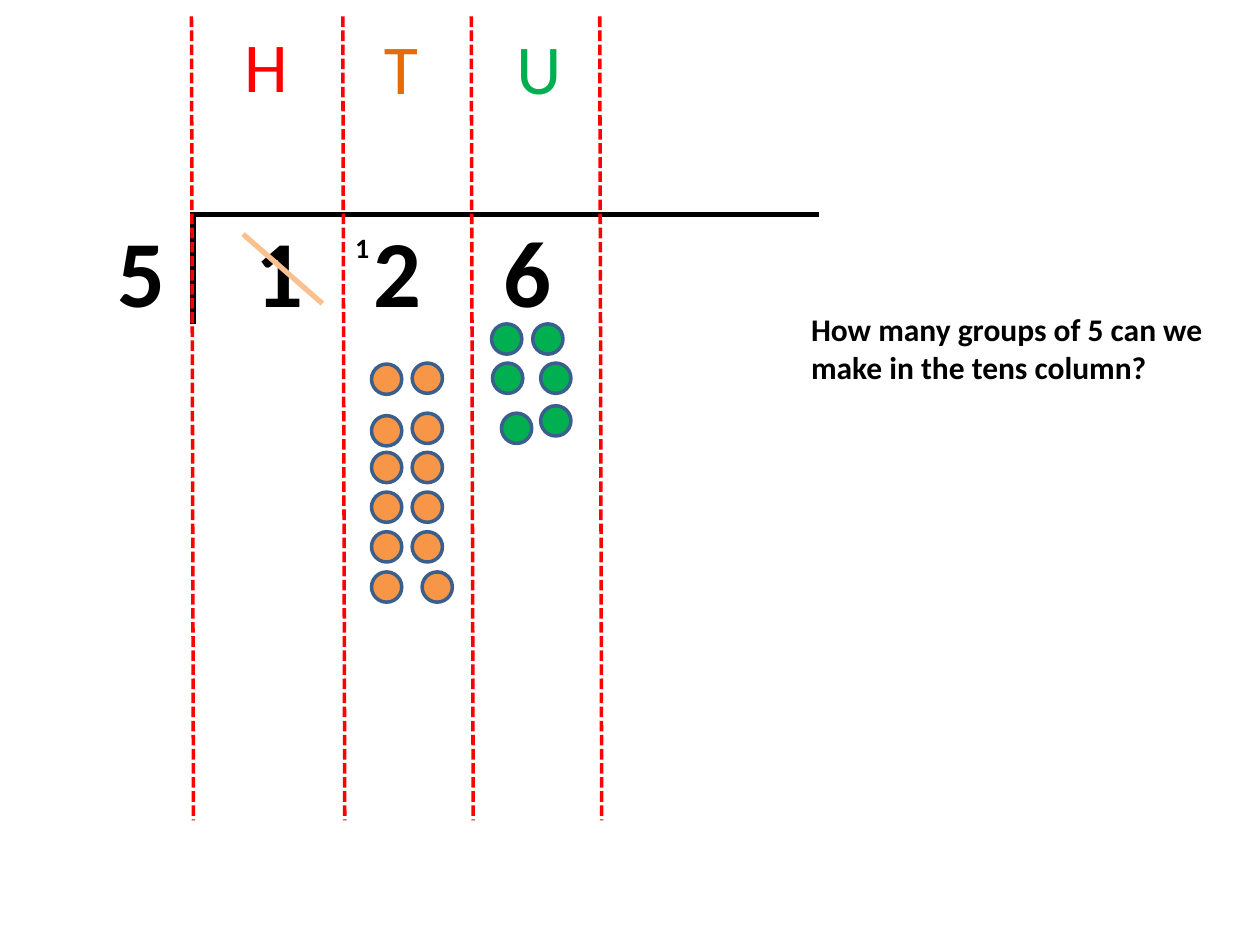
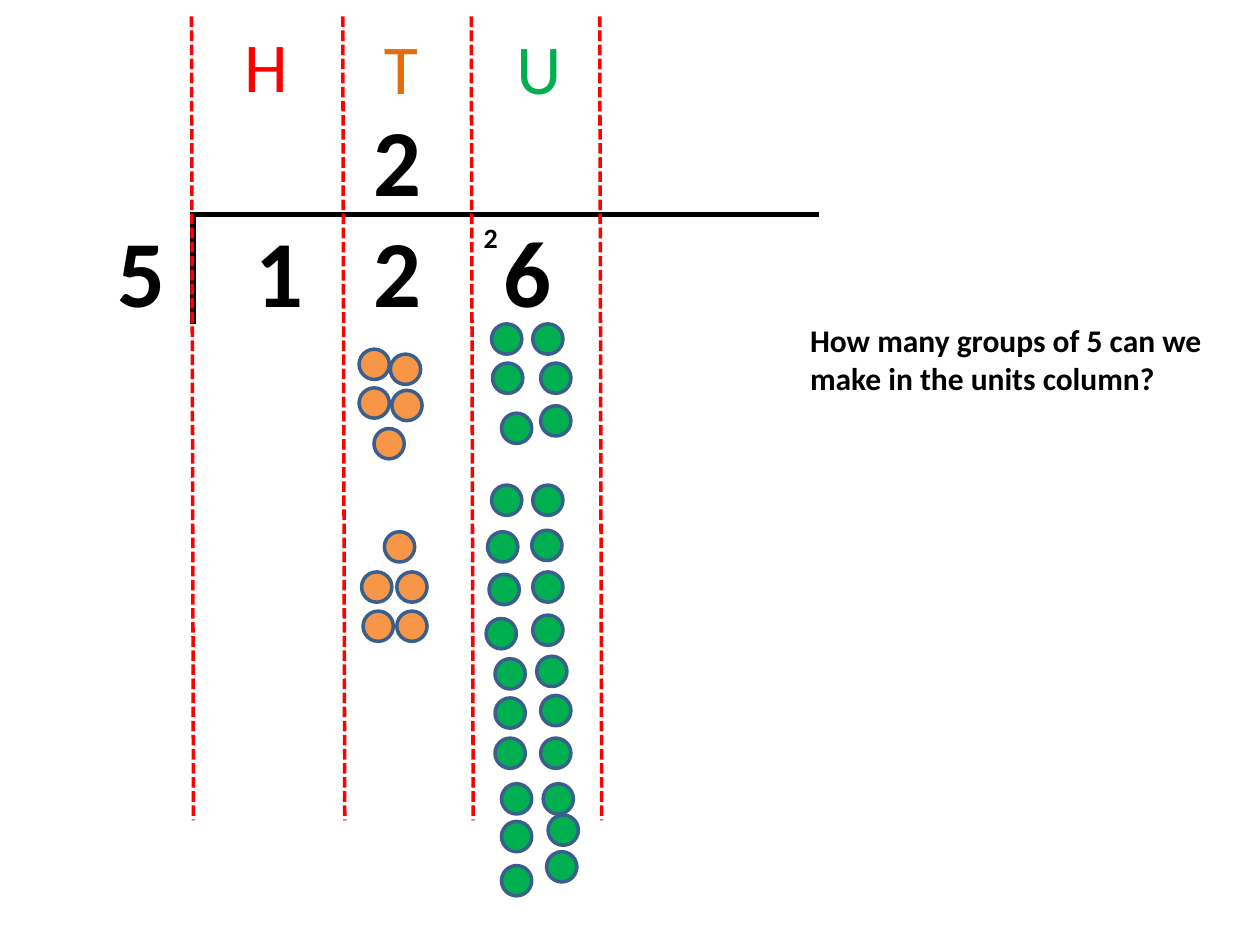
from lxml import etree
from pptx import Presentation
from pptx import util as u
from pptx.dml.color import RGBColor
from pptx.enum import dml, shapes
from pptx.oxml.ns import qn

Cm = u.Cm
FONT = "Calibri"
BLACK, RED = "000000", "FF0000"
ORANGE, GREEN = "E46C0A", "00B050"
PEACH, SAND, BLUE = "F79646", "FAC090", "3A5F8C"

DIGIT_TOP = 4.17
TEN_X = 7.29
SIX = [(9.91, 6.53), (10.74, 6.53), (9.93, 7.32),
       (10.9, 7.32), (10.9, 8.18), (10.11, 8.33)]
TWELVE = [(7.49, 7.34), (8.31, 7.32), (7.49, 8.38), (8.31, 8.33),
          *[(x, 9.12 + 0.8 * row) for row in range(3) for x in (7.49, 8.31)],
          (7.49, 11.53), (8.51, 11.53)]
FIVES = [(7.24, 7.04), (7.87, 7.14), (7.24, 7.82), (7.9, 7.87), (7.54, 8.64),
         (7.75, 10.72), (7.29, 11.53), (8, 11.53), (7.32, 12.32), (8, 12.32)]
TWENTY = [(9.91, 9.78), (10.74, 9.78), (9.83, 10.72), (10.72, 10.69),
          (9.86, 11.58), (10.74, 11.53), (9.8, 12.47), (10.74, 12.4),
          (9.98, 13.28), (10.82, 13.23), (9.98, 14.07), (10.9, 14.02),
          (9.98, 14.88), (10.9, 14.88), (10.11, 15.8), (10.95, 15.8),
          (10.11, 16.56), (11.05, 16.43), (10.11, 17.45), (11.02, 17.17)]


def color(code):
    return RGBColor.from_string(code)


def label(slide, words, x, y, size, tint=BLACK, bold=True, wide=1.19, high=2.57):
    box = slide.shapes.add_textbox(Cm(x), Cm(y), Cm(wide), Cm(high))
    frame = box.text_frame
    frame.word_wrap = True
    frame.text = words
    font = frame.paragraphs[0].runs[0].font
    font.name, font.size, font.bold = FONT, u.Pt(size), bold
    font.color.rgb = color(tint)


def digit(slide, words, x, y=DIGIT_TOP):
    label(slide, words, x, y, 54)


def carry(slide, words, x, y):
    """Write the small digit carried into the next column."""
    label(slide, words, x, y, 16, high=0.94)


def ask(slide, column, x, y):
    words = f"How many groups of 5 can we make in the {column} column?"
    label(slide, words, x, y, 18, wide=8.81)


def rule(slide, start, end, tint=BLACK, width=3, dash=None):
    line = slide.shapes.add_connector(
        shapes.MSO_CONNECTOR.STRAIGHT, *map(Cm, start + end))
    line.line.color.rgb = color(tint)
    line.line.width = u.Pt(width)
    if dash:
        line.line.dash_style = dash
    etree.SubElement(line._element.spPr, qn("a:effectLst"))


def dots(slide, places, tint):
    """Place one round counter at each position."""
    for x, y in places:
        dot = slide.shapes.add_shape(
            shapes.MSO_SHAPE.OVAL, Cm(x), Cm(y), Cm(0.61), Cm(0.61))
        dot.shadow.inherit = False
        dot.fill.solid()
        dot.fill.fore_color.rgb = color(tint)
        dot.line.color.rgb = color(BLUE)
        dot.line.width = u.Pt(2)


def frame(deck):
    """Add a slide with 126 ÷ 5 set out in place-value columns."""
    slide = deck.slides.add_slide(deck.slide_layouts[6])
    for words, x in zip("5126", (2.11, 4.9, TEN_X, 9.91)):
        digit(slide, words, x)
    rule(slide, (3.89, 4.27), (3.89, 6.53))
    rule(slide, (3.89, 4.32), (16.51, 4.32))
    for x in (3.86, 6.91, 9.5, 12.09):
        rule(slide, (x, 0.33), (x + 0.04, 16.54), RED, 2,
             dml.MSO_LINE.SQUARE_DOT)
    heads = (("H", 4.67, 0.33, RED), ("T", 7.49, 0.36, ORANGE),
             ("U", 10.16, 0.36, GREEN))
    for words, x, y, tint in heads:
        label(slide, words, x, y, 40, tint, bold=False, high=1.96)
    dots(slide, SIX, GREEN)
    return slide


def main():
    deck = Presentation()
    deck.slide_width, deck.slide_height = Cm(25.4), Cm(19.05)

    tens = frame(deck)
    dots(tens, TWELVE, PEACH)
    ask(tens, "tens", 16.1, 6.12)
    carry(tens, "1", 6.91, 4.52)
    rule(tens, (4.9, 4.72), (6.5, 6.12), SAND)

    units = frame(deck)
    dots(units, FIVES, PEACH)
    digit(units, "2", TEN_X, 1.93)
    dots(units, TWENTY, GREEN)
    ask(units, "units", 16.08, 6.35)
    carry(units, "2", 9.5, 4.32)

    deck.save("out.pptx")


if __name__ == "__main__":
    main()
